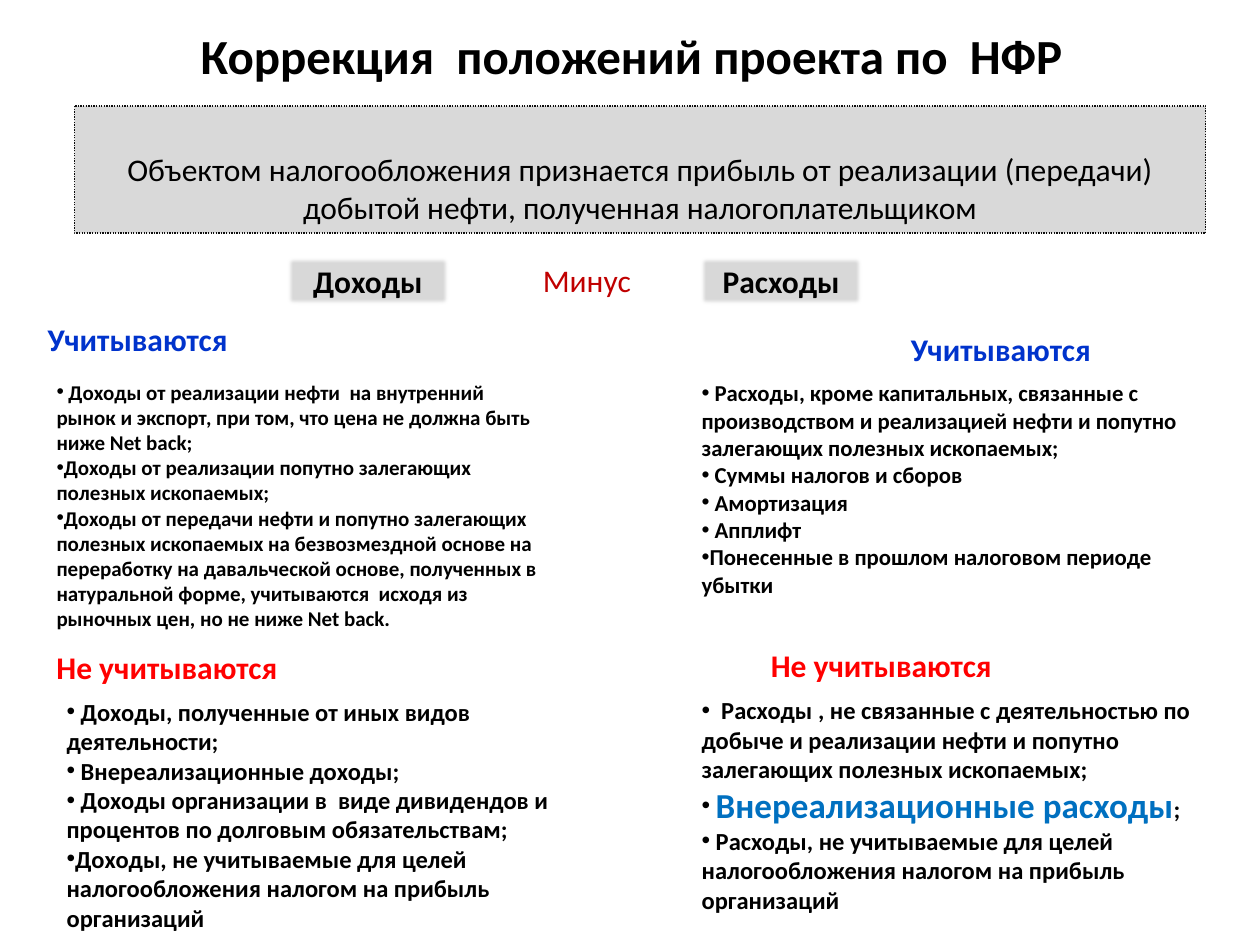
from lxml import etree
from pptx import Presentation
from pptx.dml.color import RGBColor
from pptx.enum.dml import MSO_LINE
from pptx.enum.shapes import MSO_SHAPE
from pptx.enum.text import MSO_ANCHOR, MSO_AUTO_SIZE, PP_ALIGN
from pptx.oxml.ns import qn
from pptx.util import Inches, Pt

RECTANGLE = MSO_SHAPE.RECTANGLE
DOTTED = MSO_LINE.ROUND_DOT
TOP, MIDDLE = MSO_ANCHOR.TOP, MSO_ANCHOR.MIDDLE
LEFT, CENTER = PP_ALIGN.LEFT, PP_ALIGN.CENTER
GROW = MSO_AUTO_SIZE.SHAPE_TO_FIT_TEXT
FONT = "Calibri"
COLORS = {
    "black": "000000",
    "outline": "0D0D0D",
    "panel": "D9D9D9",
    "minus": "C00000",
    "included": "0033CC",
    "excluded": "FF0000",
    "accent": "0070C0",
}
LABEL_HEIGHT = 0.4

INCOME = {
    "included": [
        " Доходы от реализации нефти  на внутренний рынок и экспорт, при том, "
        "что цена не должна быть ниже Net back;",
        "Доходы от реализации попутно залегающих полезных ископаемых;",
        "Доходы от передачи нефти и попутно залегающих  полезных ископаемых на "
        "безвозмездной основе на переработку на давальческой основе, полученных "
        "в натуральной форме, учитываются  исходя из рыночных цен, но не ниже Net back.",
    ],
    "excluded": [
        " Доходы, полученные от иных видов деятельности;",
        " Внереализационные доходы;",
        " Доходы организации в  виде дивидендов и процентов по долговым обязательствам;",
        "Доходы, не учитываемые для целей налогообложения налогом на прибыль организаций",
    ],
}
EXPENSES = {
    "included": [
        " Расходы, кроме капитальных, связанные с производством и реализацией "
        "нефти и попутно залегающих полезных ископаемых;",
        " Суммы налогов и сборов",
        " Амортизация",
        " Апплифт",
        "Понесенные в прошлом налоговом периоде убытки",
    ],
    "excluded": [
        "  Расходы , не связанные с деятельностью по добыче и реализации нефти "
        "и попутно залегающих полезных ископаемых;",
        [(" ", 14, "black"), ("Внереализационные расходы", 20, "accent"), (";", 14, "black")],
        " Расходы, не учитываемые для целей налогообложения налогом на прибыль организаций",
    ],
}


def add_run(paragraph, text, size, color, bold=True):
    run = paragraph.add_run()
    run.text = text
    run.font.name = FONT
    run.font.size = Pt(size)
    run.font.bold = bold
    run.font.color.rgb = RGBColor.from_string(COLORS[color])


def add_box(slide, box, fill=None, soft=True):
    """A thinly outlined rectangle; soft edges fade the outline away."""
    shape = slide.shapes.add_shape(RECTANGLE, *[Inches(length) for length in box])
    shape.shadow.inherit = False
    shape.line.color.rgb = RGBColor.from_string(COLORS["outline"])
    shape.line.width = Pt(0.75)
    if fill:
        shape.fill.solid()
        shape.fill.fore_color.rgb = RGBColor.from_string(COLORS[fill])
    else:
        shape.fill.background()
    if soft:
        effects = shape._element.spPr.find(qn("a:effectLst"))
        etree.SubElement(effects, qn("a:softEdge"), rad=str(Pt(2.5)))
    frame = shape.text_frame
    frame.word_wrap = True
    frame.auto_size = GROW
    frame.vertical_anchor = TOP
    return shape


def add_label(slide, box, text, color="black", bold=True, align=LEFT, fill=None, soft=True):
    shape = add_box(slide, box, fill, soft)
    paragraph = shape.text_frame.paragraphs[0]
    paragraph.alignment = align
    add_run(paragraph, text, 18, color, bold)
    return shape


def add_bullet_list(slide, box, items, size):
    frame = add_box(slide, box).text_frame
    for index, item in enumerate(items):
        paragraph = frame.add_paragraph() if index else frame.paragraphs[0]
        paragraph.alignment = LEFT
        properties = paragraph._p.get_or_add_pPr()
        etree.SubElement(properties, qn("a:buFont"), typeface="Arial")
        etree.SubElement(properties, qn("a:buChar"), char="•")
        runs = [(item, size, "black")] if isinstance(item, str) else item
        for text, run_size, color in runs:
            add_run(paragraph, text, run_size, color)


def add_heading(slide, box):
    title = slide.shapes.add_textbox(*[Inches(length) for length in box])
    title.text_frame.word_wrap = True
    title.text_frame.vertical_anchor = MIDDLE
    paragraph = title.text_frame.paragraphs[0]
    paragraph.alignment = CENTER
    add_run(paragraph, "Коррекция  положений проекта по  НФР", 28, "black")


def add_definition(slide, box):
    panel = add_label(
        slide, box,
        "Объектом налогообложения признается прибыль от реализации (передачи) "
        "добытой нефти, полученная налогоплательщиком",
        bold=False, align=CENTER, fill="panel", soft=False,
    )
    panel.text_frame.margin_top = Inches(0.35)
    panel.line.dash_style = DOTTED


def add_formula(slide, box):
    """Income minus expenses."""
    left, top, width, height = box
    label_width = 1.3
    for label_left, text in ((left, "Доходы"), (left + width - label_width, "Расходы")):
        add_label(slide, (label_left, top, label_width, height), text,
                  align=CENTER, fill="panel")
    add_label(slide, (left + 1.94, top - 0.01, label_width, height), "Минус",
              "minus", bold=False)


def add_section(slide, box, heading, heading_offset, heading_width, color, items, size):
    """A coloured heading, offset from the corner of its list's box."""
    left, top, _, _ = box
    shift, rise = heading_offset
    add_label(slide, (left + shift, top - rise, heading_width, LABEL_HEIGHT), heading, color)
    add_bullet_list(slide, box, items, size)


def main():
    presentation = Presentation()
    presentation.slide_width = Inches(10)
    presentation.slide_height = Inches(7.5)
    slide = presentation.slides.add_slide(presentation.slide_layouts[6])

    add_heading(slide, (0.51, 0.13, 9, 0.61))
    add_definition(slide, (0.59, 0.84, 8.98, 1.01))
    add_formula(slide, (2.27, 2.03, 4.58, LABEL_HEIGHT))

    included, excluded = "Учитываются", "Не учитываются"
    add_section(slide, (0.35, 2.96, 4.09, 2.12), included, (-0.07, 0.47), 3.07,
                "included", INCOME["included"], 12)
    add_section(slide, (0.43, 5.48, 4.25, 1.99), excluded, (-0.08, 0.39), 3.07,
                "excluded", INCOME["excluded"], 14)
    add_section(slide, (5.47, 2.96, 4.09, 2.07), included, (1.66, 0.39), 2.28,
                "included", EXPENSES["included"], 13)
    add_section(slide, (5.47, 5.47, 4.25, 1.85), excluded, (0.55, 0.39), 3.07,
                "excluded", EXPENSES["excluded"], 14)

    presentation.save("out.pptx")


if __name__ == "__main__":
    main()
